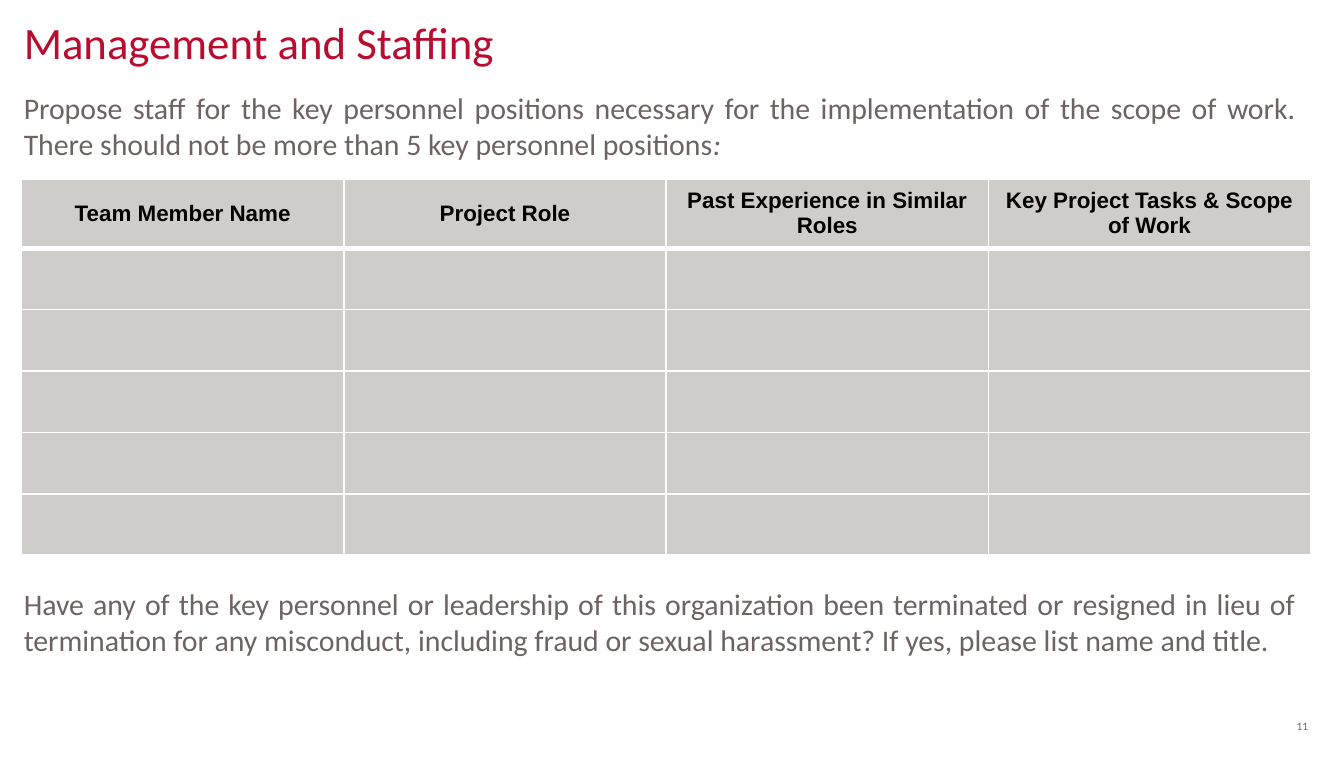
from dataclasses import dataclass

from lxml import etree
from pptx import Presentation
from pptx import util as u
from pptx.dml.color import RGBColor
from pptx.enum import text as t
from pptx.oxml import ns

RED, GREY, SAND, WHITE, BLACK = "BA0C2F", "6C6463", "CFCDC9", "FFFFFF", "000000"
HEADS = [
    "Team Member Name",
    "Project Role",
    "Past Experience in Similar Roles",
    "Key Project Tasks & Scope of Work",
]
STAFF = 5
ASK = (
    "Propose staff for the key personnel positions necessary for the "
    "implementation of the scope of work. There should not be more than "
    "5 key personnel positions"
)
CHECK = (
    "Have any of the key personnel or leadership of this organization been "
    "terminated or resigned in lieu of termination for any misconduct, "
    "including fraud or sexual harassment? If yes, please list name and title."
)


@dataclass
class Block:
    left: float
    top: float
    width: float
    height: float
    lines: list[str]
    size: float
    color: str = GREY
    align: t.PP_ALIGN = t.PP_ALIGN.LEFT
    anchor: t.MSO_ANCHOR = t.MSO_ANCHOR.TOP
    gap: float = 0


def tint(code: str) -> RGBColor:
    return RGBColor.from_string(code)


def style(para, face: str, size: float, color: str, align: t.PP_ALIGN) -> None:
    para.alignment = align
    para.font.name = face
    para.font.size = u.Pt(size)
    para.font.color.rgb = tint(color)


def write(slide, block: Block):
    box = slide.shapes.add_textbox(
        u.Cm(block.left), u.Cm(block.top), u.Cm(block.width), u.Cm(block.height)
    )
    frame = box.text_frame
    frame.word_wrap = True
    frame.vertical_anchor = block.anchor
    frame.text = "\n".join(block.lines)
    for para in frame.paragraphs:
        style(para, "Calibri", block.size, block.color, block.align)
    for para in frame.paragraphs[1:]:
        para.space_before = u.Pt(block.gap)
    return frame


def edge(cell, side: str, width: float) -> None:
    props = cell._tc.get_or_add_tcPr()
    line = etree.SubElement(props, ns.qn(f"a:ln{side}"), w=str(u.Pt(width)))
    fill = etree.SubElement(line, ns.qn("a:solidFill"))
    etree.SubElement(fill, ns.qn("a:srgbClr"), val=WHITE)


def paint(cell, row: int) -> None:
    widths = {"L": 1, "R": 1, "T": 3 if row == 1 else 1, "B": 3 if row == 0 else 1}
    for side, width in widths.items():
        edge(cell, side, width)
    cell.fill.solid()
    cell.fill.fore_color.rgb = tint(SAND)


def grid(slide) -> None:
    frame = slide.shapes.add_table(
        STAFF + 1, len(HEADS), u.Cm(0.41), u.Cm(3.38), u.Cm(24.36), u.Cm(7.14)
    )
    table = frame.table
    for row, line in enumerate(table.rows):
        line.height = u.Cm(1.16 if row else 1.31)
        for cell in line.cells:
            paint(cell, row)
    for cell, head in zip(table.rows[0].cells, HEADS):
        cell.text = head
        cell.vertical_anchor = t.MSO_ANCHOR.MIDDLE
        cell.margin_left = cell.margin_right = u.Cm(0.18)
        cell.margin_top = cell.margin_bottom = 0
        para = cell.text_frame.paragraphs[0]
        style(para, "Arial", 12, BLACK, t.PP_ALIGN.CENTER)
        para.font.bold = True


def main() -> None:
    deck = Presentation()
    deck.slide_width, deck.slide_height = u.Cm(25.4), u.Cm(14.4)
    slide = deck.slides.add_slide(deck.slide_layouts[6])
    write(slide, Block(19.05, 13.46, 5.92, 0.51, ["11"], 6,
                       align=t.PP_ALIGN.RIGHT, anchor=t.MSO_ANCHOR.MIDDLE))
    write(slide, Block(0.2, 0.15, 21.59, 1.27, ["Management and Staffing"], 24,
                       RED, anchor=t.MSO_ANCHOR.BOTTOM))
    body = write(slide, Block(0.2, 1.57, 24.56, 12.04, [ASK, CHECK], 16,
                              align=t.PP_ALIGN.JUSTIFY, gap=227.5))
    colon = body.paragraphs[0].add_run()
    colon.text = ":"
    colon.font.italic = True
    grid(slide)
    deck.save("out.pptx")


if __name__ == "__main__":
    main()
